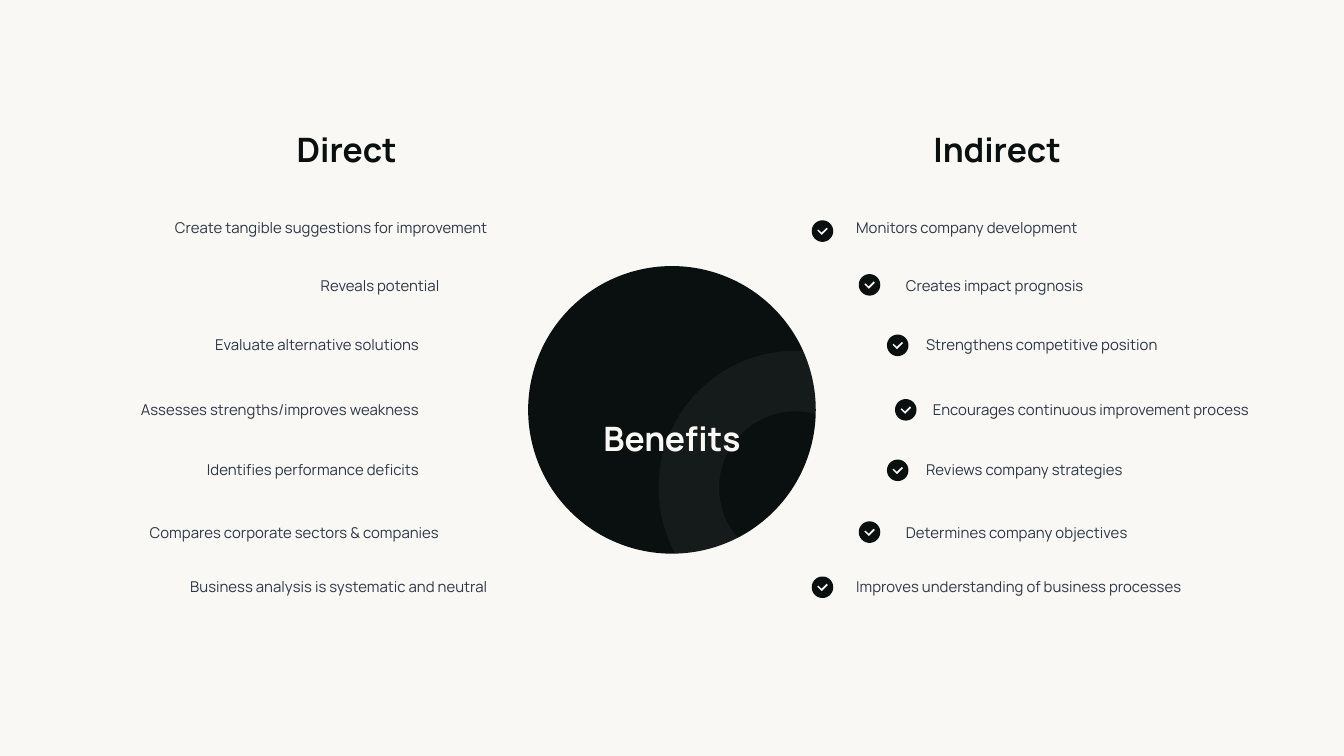
from dataclasses import dataclass
from math import cos, radians, sin

from lxml.etree import SubElement
from pptx import Presentation
from pptx.dml.color import RGBColor
from pptx.enum.shapes import MSO_SHAPE
from pptx.enum.text import MSO_ANCHOR, MSO_AUTO_SIZE, PP_ALIGN
from pptx.oxml.ns import qn
from pptx.util import Inches, Pt

COLORS = {"paper": "F9F8F5", "ink": "09100F", "text": "2C3645"}
HEADING = {"size": Pt(18), "bold": True, "name": "Manrope"}
ITEM = {"size": Pt(8), "bold": False, "name": "Manrope"}
FRAME = {
    "margin_left": 0, "margin_top": 0, "margin_right": 0, "margin_bottom": 0,
    "word_wrap": True, "auto_size": MSO_AUTO_SIZE.SHAPE_TO_FIT_TEXT,
}
SLIDE_W = 10
SLIDE_H = SLIDE_W * 9 / 16
ITEM_W, ITEM_H = 3.25, 0.13
CHECK_R = 0.08
TICK = [(0.39, -0.34), (0.52, -0.2), (-0.06, 0.38),
        (-0.5, -0.05), (-0.4, -0.17), (-0.08, 0.12)]


@dataclass
class Row:
    direct: str
    indirect: str
    top: float
    direct_right: float
    indirect_left: float
    check_x: float
    check_y: float


@dataclass
class Circle:
    x: float
    y: float
    r: float

    def arc(self, start: int, end: int, steps: int = 40) -> list:
        angles = [radians(start + (end - start) * i / steps) for i in range(steps + 1)]
        return [(self.x + self.r * cos(a), self.y + self.r * sin(a)) for a in angles]


ROWS = [
    Row("Create tangible suggestions for improvement",
        "Monitors company development", 1.63, 3.63, 6.37, 6.12, 1.72),
    Row("Reveals potential",
        "Creates impact prognosis", 2.06, 3.27, 6.74, 6.47, 2.12),
    Row("Evaluate alternative solutions",
        "Strengthens competitive position", 2.5, 3.12, 6.89, 6.68, 2.57),
    Row("Assesses strengths/improves weakness",
        "Encourages continuous improvement process", 2.98, 3.12, 6.94, 6.74, 3.05),
    Row("Identifies performance deficits",
        "Reviews company strategies", 3.43, 3.12, 6.89, 6.68, 3.5),
    Row("Compares corporate sectors & companies",
        "Determines company objectives", 3.9, 3.27, 6.74, 6.47, 3.96),
    Row("Business analysis is systematic and neutral",
        "Improves understanding of business processes", 4.3, 3.63, 6.37, 6.12, 4.37),
]


def set_format(target, values: dict) -> None:
    for name, value in values.items():
        setattr(target, name, value)


def place(sp, x: float, y: float, w: float, h: float) -> None:
    set_format(sp, {"left": Inches(x), "top": Inches(y),
                    "width": Inches(w), "height": Inches(h)})


def write(sp, text: str, font: dict, color: str, align, anchor=MSO_ANCHOR.TOP,
          spacing: float = 1.0) -> None:
    tf = sp.text_frame
    set_format(tf, {**FRAME, "vertical_anchor": anchor})
    p = tf.paragraphs[0]
    set_format(p, {"alignment": align, "line_spacing": spacing, "space_before": Pt(0)})
    r = p.add_run()
    r.text = text
    set_format(r.font, font)
    r.font.color.rgb = RGBColor.from_string(COLORS[color])


def paint(sp, color: str) -> None:
    sp.shadow.inherit = False
    sp.fill.solid()
    sp.fill.fore_color.rgb = RGBColor.from_string(COLORS[color])
    sp.line.fill.background()


def add_outline(s, contours: list, color: str):
    points = [[(Inches(x), Inches(y)) for x, y in c] for c in contours]
    builder = s.shapes.build_freeform(*points[0][0])
    builder.add_line_segments(points[0][1:], close=True)
    for contour in points[1:]:
        builder.move_to(*contour[0])
        builder.add_line_segments(contour[1:], close=True)
    sp = builder.convert_to_shape()
    paint(sp, color)
    return sp


def add_check(s, x: float, y: float) -> None:
    tick = [(x + dx * CHECK_R, y + dy * CHECK_R) for dx, dy in TICK]
    add_outline(s, [Circle(x, y, CHECK_R).arc(0, 360), tick], "ink")


def add_item(s, text: str, x: float, y: float, align) -> None:
    sp = s.shapes.add_textbox(Inches(x), Inches(y), Inches(ITEM_W), Inches(ITEM_H))
    write(sp, text, ITEM, "text", align, MSO_ANCHOR.MIDDLE)


def add_emblem(s) -> None:
    disc = Circle(5, 3.05, 1.07)
    sp = s.shapes.add_shape(MSO_SHAPE.OVAL, Inches(disc.x - disc.r), Inches(disc.y - disc.r),
                            Inches(2 * disc.r), Inches(2 * disc.r))
    paint(sp, "ink")
    outer, inner = Circle(5.92, 3.63, 1.02), Circle(5.92, 3.63, 0.57)
    band = outer.arc(-87, -209) + disc.arc(88, 63) + inner.arc(138, 285) + disc.arc(2, -24)
    sp = add_outline(s, [band], "paper")
    clr = sp.element.spPr.find(qn("a:solidFill"))[0]
    SubElement(clr, qn("a:alpha"), val="5000")


def main() -> None:
    prs = Presentation()
    prs.slide_width, prs.slide_height = Inches(SLIDE_W), Inches(SLIDE_H)
    s = prs.slides.add_slide(prs.slide_layouts.get_by_name("Comparison"))
    s.background.fill.solid()
    s.background.fill.fore_color.rgb = RGBColor.from_string(COLORS["paper"])

    title, direct, direct_list, indirect, indirect_list = list(s.placeholders)[:5]
    for sp in list(s.placeholders)[5:] + [direct_list, indirect_list]:
        sp.element.getparent().remove(sp.element)

    add_emblem(s)
    s.shapes.element.append(title.element)
    place(title, 4.07, 2.91, 1.86, 0.3)
    write(title, "Benefits", HEADING, "paper", PP_ALIGN.CENTER, spacing=1.67)

    for sp, text, x in ((direct, "Direct", 1.29), (indirect, "Indirect", 6.13)):
        place(sp, x, 0.96, 2.58, 0.3)
        write(sp, text, HEADING, "ink", PP_ALIGN.CENTER)

    for row in ROWS:
        add_item(s, row.direct, row.direct_right - ITEM_W, row.top, PP_ALIGN.RIGHT)
        add_check(s, row.check_x, row.check_y)
        add_item(s, row.indirect, row.indirect_left, row.top, PP_ALIGN.LEFT)

    prs.save("out.pptx")


if __name__ == "__main__":
    main()
